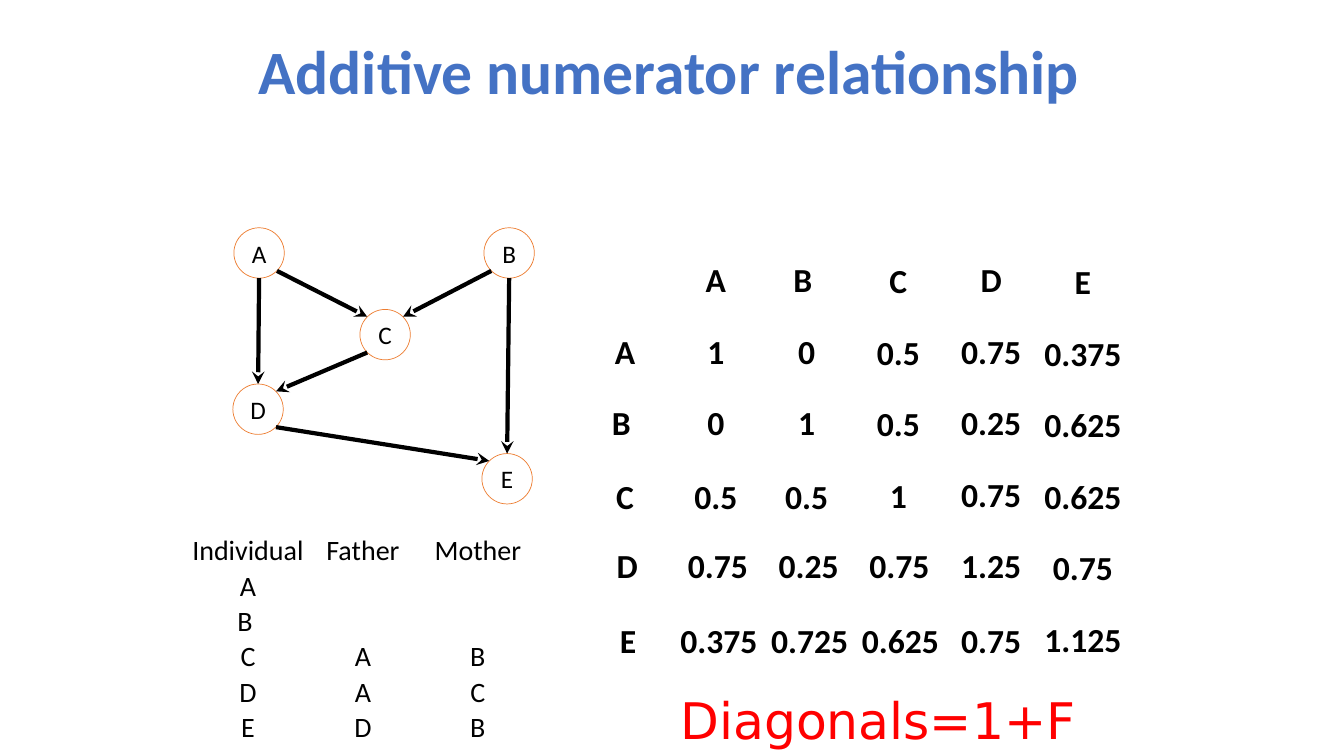
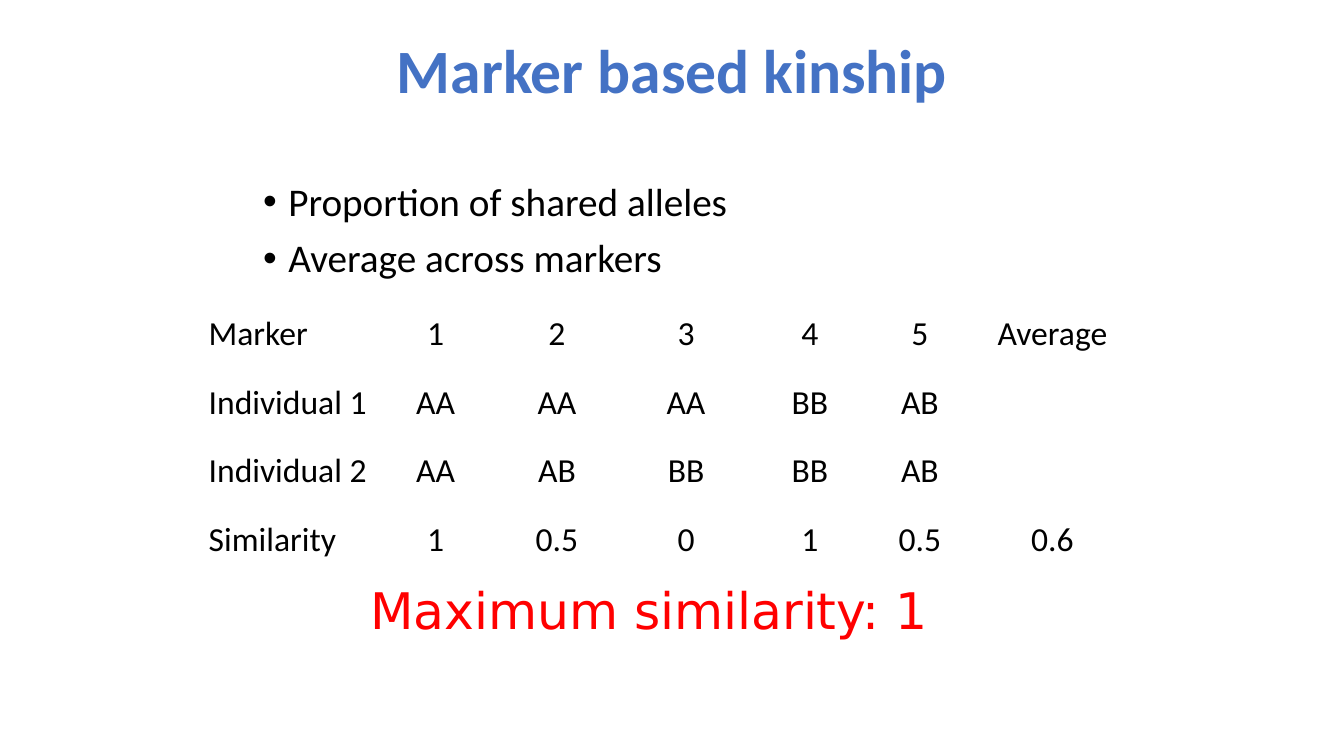
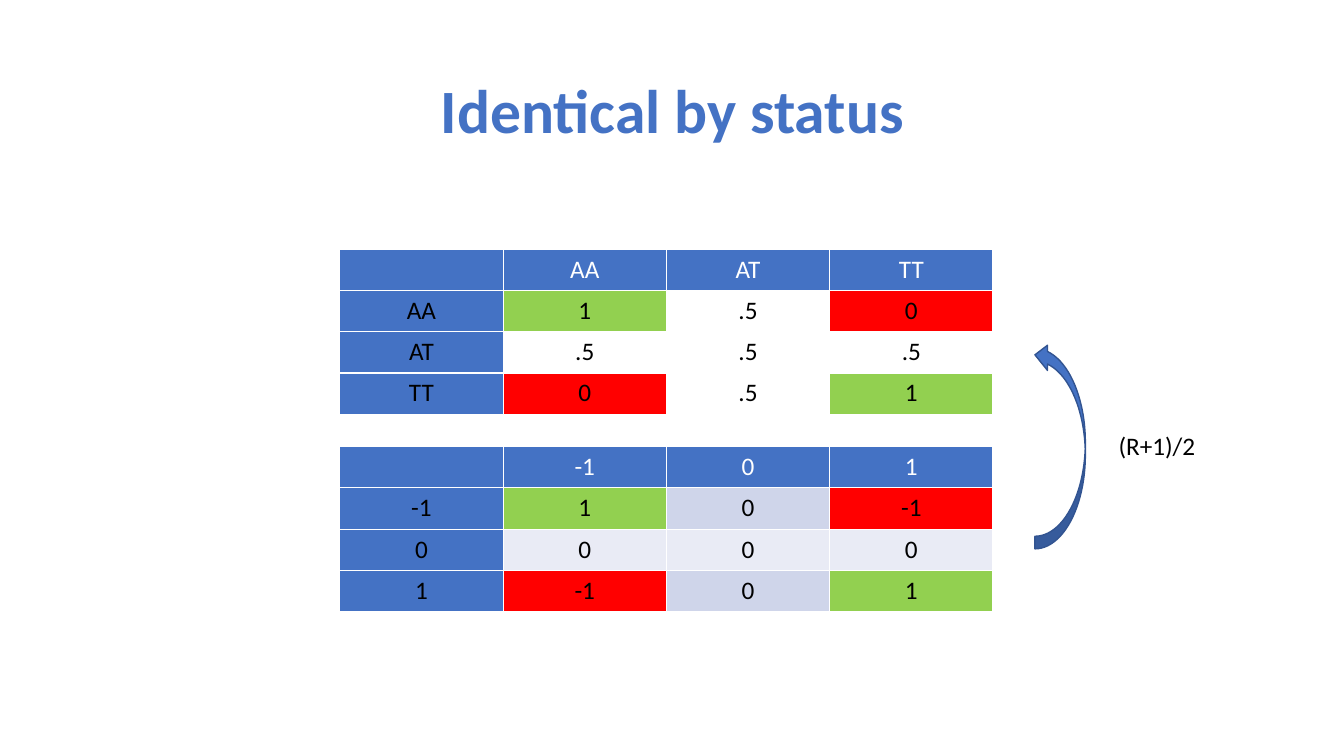
from lxml import etree
from pptx import Presentation
from pptx.dml.color import RGBColor
from pptx.enum.shapes import MSO_CONNECTOR as Connector, MSO_SHAPE as Shape
from pptx.enum.text import MSO_ANCHOR as Anchor, PP_ALIGN as Align
from pptx.oxml.ns import qn
from pptx.util import Inches, Pt

rgb = RGBColor.from_string
BLUE, ORANGE, RED, GREEN = "4472C4", "ED7D31", "FF0000", "92D050"
BLACK, WHITE = "000000", "FFFFFF"
FONT = "Calibri"
TITLE_ONLY, TITLE_AND_CONTENT = 5, 1
PLAIN_TABLE_STYLE = "{2D5ABB26-0587-4C30-8999-92F81FD0307C}"

prs = Presentation()
prs.slide_width, prs.slide_height = Inches(13.33), Inches(7.5)


def add_titled_slide(text, left, top, layout=TITLE_ONLY):
    slide = prs.slides.add_slide(prs.slide_layouts[layout])
    title = slide.shapes.title
    title.left, title.top = Inches(left), Inches(top)
    title.width, title.height = Inches(11.5), Inches(1.45)
    title.text_frame.text = text
    title.text_frame.vertical_anchor = Anchor.MIDDLE
    heading = title.text_frame.paragraphs[0]
    heading.alignment, heading.line_spacing = Align.CENTER, 0.9
    heading.font.name, heading.font.size, heading.font.bold = FONT, Pt(44), True
    heading.font.color.rgb = rgb(BLUE)
    return slide


def add_grid(slide, left, top, widths, row_height, rows, size, bold=False, anchor=None):
    """Add a table of centred text; with an anchor it is unfilled, borderless and tight."""
    frame = slide.shapes.add_table(len(rows), len(widths), Inches(left), Inches(top),
                                   Inches(sum(widths)), Inches(row_height * len(rows)))
    grid = frame.table
    for column, width in zip(grid.columns, widths):
        column.width = Inches(width)
    for row, texts in zip(grid.rows, rows):
        row.height = Inches(row_height)
        for cell, text in zip(row.cells, texts):
            cell.text = text
            entry = cell.text_frame.paragraphs[0]
            entry.alignment = Align.CENTER
            entry.font.name, entry.font.size, entry.font.bold = FONT, Pt(size), bold
            entry.font.color.rgb = rgb(BLACK)
            if anchor is not None:
                cell.fill.background()
                cell.vertical_anchor = anchor
                cell.margin_left = cell.margin_right = cell.margin_top = Inches(0.01)
                cell.margin_bottom = 0
    if anchor is not None:
        grid.first_row = grid.horz_banding = False
        next(frame.element.iter(qn("a:tableStyleId"))).text = PLAIN_TABLE_STYLE
    return grid


# Slide 1: pedigree and relationship matrix
relationship = add_titled_slide("Additive numerator relationship", 0.89, 0.01)

DIAMETER = 0.5
centres = {"A": (2.57, 2.51), "B": (5.05, 2.51), "C": (3.82, 3.32),
           "D": (2.56, 4.06), "E": (5.03, 4.75)}
for name, (x, y) in centres.items():
    circle = relationship.shapes.add_shape(
        Shape.OVAL, Inches(x - DIAMETER / 2), Inches(y - DIAMETER / 2),
        Inches(DIAMETER), Inches(DIAMETER))
    circle.shadow.inherit = False
    circle.fill.background()
    circle.line.color.rgb, circle.line.width = rgb(ORANGE), Pt(0.5)
    circle.text_frame.text = name
    circle.text_frame.vertical_anchor = Anchor.MIDDLE
    circle.text_frame.word_wrap = False
    label = circle.text_frame.paragraphs[0]
    label.alignment = Align.CENTER
    label.font.name, label.font.size = FONT, Pt(18)
    label.font.color.rgb = rgb(BLACK)

# Direction in which each arrow leaves the parent; it enters the child opposite
descents = [("A", "C", 0.71, 0.71), ("B", "C", -0.71, 0.71), ("A", "D", 0, 1),
            ("C", "D", -0.71, 0.71), ("D", "E", 0.71, 0.71), ("B", "E", 0, 1)]
for parent, child, dx, dy in descents:
    (x1, y1), (x2, y2) = centres[parent], centres[child]
    dx, dy = dx * DIAMETER / 2, dy * DIAMETER / 2
    arrow = relationship.shapes.add_connector(
        Connector.STRAIGHT, Inches(x1 + dx), Inches(y1 + dy), Inches(x2 - dx), Inches(y2 - dy))
    arrow.line.color.rgb, arrow.line.width = rgb(BLACK), Pt(3)
    etree.SubElement(arrow.line._get_or_add_ln(), qn("a:tailEnd"), type="stealth")
    etree.SubElement(arrow.element.spPr, qn("a:effectLst"))

pedigree = [["Individual", "Father", "Mother"], ["A", "", ""], ["B ", "", ""],
            ["C", "A", "B"], ["D", "A", "C"], ["E", "D", "B"]]
add_grid(relationship, 1.89, 5.29, [1.14] * 3, 0.35, pedigree, 20, anchor=Anchor.BOTTOM)

matrix = [["", "A", "B ", "C", "D", "E"],
          ["A", "1", "0", "0.5", "0.75", "0.375"],
          ["B ", "0", "1", "0.5", "0.25", "0.625"],
          ["C", "0.5", "0.5", "1", "0.75", "0.625"],
          ["D", "0.75", "0.25", "0.75", "1.25", "0.75"],
          ["E", "0.375", "0.725", "0.625", "0.75", "1.125"]]
# The matrix grows by one individual at a time: left, top, first and end row, first and end column
growth = [(5.75, 2.43, 0, 3, 0, 3),
          (8.46, 2.44, 0, 4, 3, 4), (5.75, 4.58, 3, 4, 0, 3),
          (9.38, 2.43, 0, 5, 4, 5), (5.77, 5.27, 4, 5, 0, 4),
          (10.29, 2.45, 0, 6, 5, 6), (5.78, 6.01, 5, 6, 0, 5)]
for left, top, row, row_end, col, col_end in growth:
    block = [values[col:col_end] for values in matrix[row:row_end]]
    add_grid(relationship, left, top, [0.9] * (col_end - col), 0.71, block, 24,
             bold=True, anchor=Anchor.MIDDLE)

# Slide 2: similarity by markers
kinship = add_titled_slide("Marker based kinship", 0.92, 0, TITLE_AND_CONTENT)

method = kinship.placeholders[1]
method.left, method.top = Inches(2.51), Inches(1.76)
method.width, method.height = Inches(8.1), Inches(1.21)
method.text_frame.text = "Proportion of shared alleles\nAverage across markers"
for point in method.text_frame.paragraphs:
    point.line_spacing, point.space_before = 0.9, Pt(10)
    point.font.name, point.font.size = FONT, Pt(28)
    point.font.color.rgb = rgb(BLACK)
    properties = point._p.get_or_add_pPr()
    properties.set("marL", str(Inches(0.25)))
    properties.set("indent", str(Inches(-0.25)))

markers = [["Marker", "1", "2", "3", "4", "5", "Average"],
           ["Individual 1", "AA", "AA", "AA", "BB", "AB", ""],
           ["Individual 2", "AA", "AB", "BB", "BB", "AB", ""],
           ["Similarity", "1", "0.5", "0", "1", "0.5", "0.6"]]
similarity = add_grid(kinship, 2.06, 2.97, [1.69, 1.14, 1.27, 1.29, 1.17, 1.01, 1.62], 0.68,
                      markers, 24, anchor=Anchor.MIDDLE)
for row in similarity.rows:
    row.cells[0].text_frame.paragraphs[0].alignment = Align.LEFT

# Slide 3: two codings of identity by status
status = add_titled_slide("Identical by status", 0.92, 0.4)

by_genotype = [["", "AA", "AT", "TT"], ["AA", "1", ".5", "0"],
               ["AT", ".5", ".5", ".5"], ["TT", "0", ".5", "1"]]
by_code = [["", "-1", "0", "1"], ["-1", "1", "0", "-1"],
           ["0", "0", "0", "0"], ["1", "-1", "0", "1"]]
codings = [(2.47, by_genotype, "0", (WHITE, WHITE)),
           (4.43, by_code, "-1", ("E9EBF5", "CFD5EA"))]
for top, scores, lowest, bands in codings:
    coding = add_grid(status, 3.37, top, [1.62] * 4, 0.41, scores, 18)
    for r, row in enumerate(coding.rows):
        for c, cell in enumerate(row.cells):
            heading = r == 0 or c == 0
            score_fill = {"1": GREEN, lowest: RED}.get(cell.text, bands[r % 2])
            cell.fill.solid()
            cell.fill.fore_color.rgb = rgb(BLUE if heading else score_fill)
            if r == 0:
                cell.text_frame.paragraphs[0].font.color.rgb = rgb(WHITE)

conversion = status.shapes.add_shape(Shape.CURVED_UP_ARROW, Inches(9.49), Inches(4.17),
                                     Inches(2.05), Inches(0.5))
conversion.rotation = 270
conversion.shadow.inherit = False
conversion.fill.solid()
conversion.fill.fore_color.rgb = rgb(BLUE)
conversion.line.color.rgb, conversion.line.width = rgb("325491"), Pt(1)

# Captions of all slides
captions = [
    (relationship, "Diagonals=1+F", 5.75, 6.79, 5.92, 0.71, Align.CENTER, "DejaVu Sans", 36, RED),
    (kinship, "Maximum similarity: 1", 3.48, 5.7, 5.92, 0.71, Align.CENTER, "DejaVu Sans", 36, RED),
    (status, "(R+1)/2", 10.76, 4.22, 1.43, 0.4, Align.CENTER, FONT, 18, BLACK),
]
for slide, text, left, top, width, height, alignment, font, size, colour in captions:
    caption = slide.shapes.add_textbox(Inches(left), Inches(top), Inches(width), Inches(height))
    caption.text_frame.word_wrap = True
    caption.text_frame.text = text
    line = caption.text_frame.paragraphs[0]
    line.alignment = alignment
    line.font.name, line.font.size = font, Pt(size)
    line.font.color.rgb = rgb(colour)

prs.save("out.pptx")
